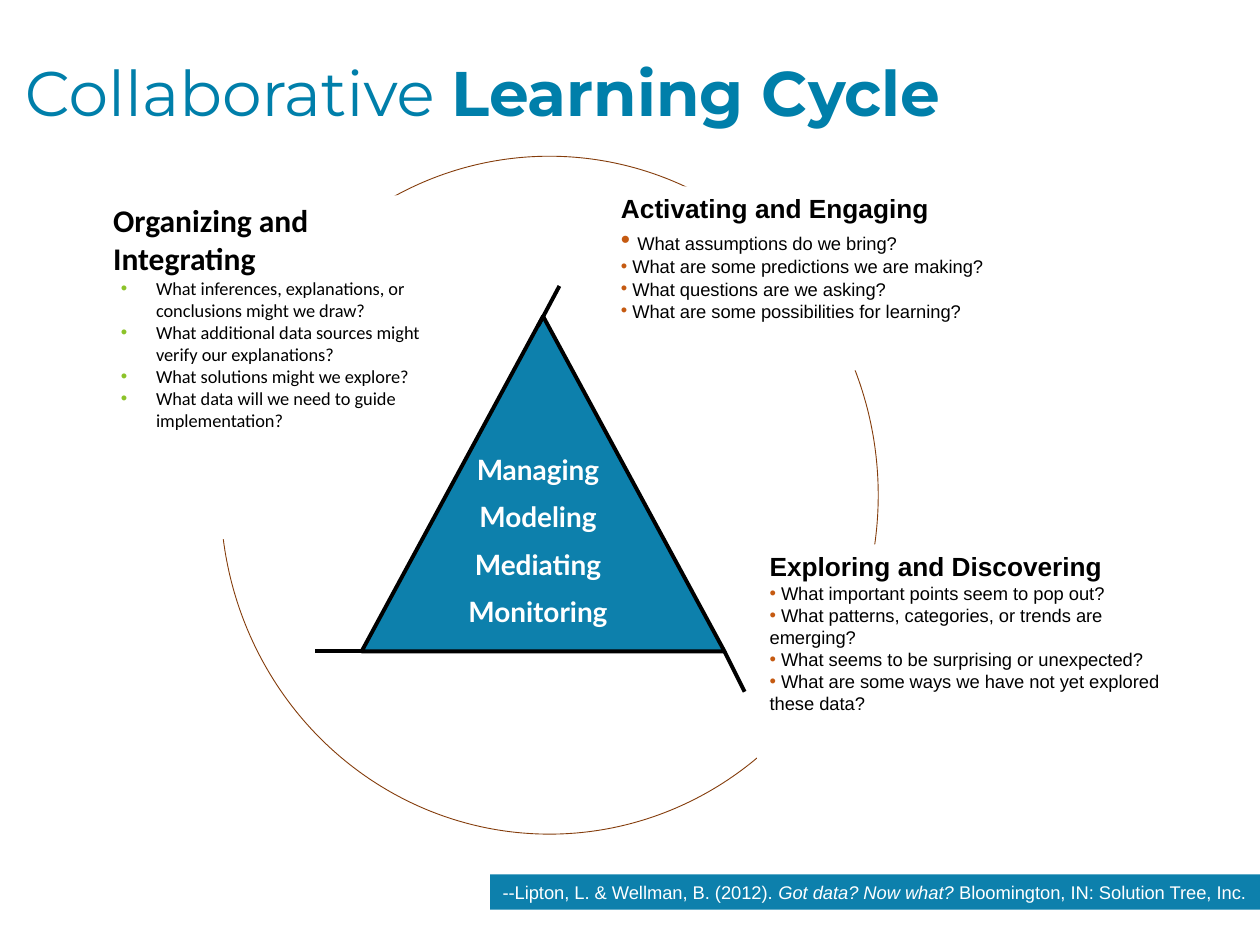
"""Build the Collaborative Learning Cycle slide."""
from lxml.etree import SubElement
from pptx import Presentation
from pptx.dml.color import RGBColor
from pptx.enum.shapes import MSO_CONNECTOR, MSO_SHAPE
from pptx.enum.text import MSO_ANCHOR, PP_ALIGN
from pptx.oxml.ns import qn
from pptx.util import Inches, Pt

RECT, OVAL, PEAK = MSO_SHAPE.RECTANGLE, MSO_SHAPE.OVAL, MSO_SHAPE.ISOSCELES_TRIANGLE
LINE = MSO_CONNECTOR.STRAIGHT
LEFT, MID = PP_ALIGN.LEFT, PP_ALIGN.CENTER
TOP, HALF = MSO_ANCHOR.TOP, MSO_ANCHOR.MIDDLE

WHITE = RGBColor(0xFF, 0xFF, 0xFF)
BLACK = RGBColor(0, 0, 0)
TEAL = RGBColor(0x00, 0x7F, 0xAA)
BLUE = RGBColor(0x0D, 0x80, 0xAC)
BROWN = RGBColor(0x84, 0x3C, 0x0B)
RUST = RGBColor(0xC5, 0x5A, 0x11)
GREEN = RGBColor(0x8C, 0xC3, 0x29)

COLS, ROWS, CELL = 100, 75, Inches(0.1)

TITLE = [[("Collaborative ", {}), ("Learning Cycle", {"bold": True})]]
PHASES = [
    {"box": (48.3, 14.8, 40.9, 14.6), "head": "Activating and Engaging",
     "face": "Arial", "size": 15, "dot": RUST, "hang": 0, "lead": " ",
     "asks": ["What assumptions do we bring?",
              " What are some predictions we are making?",
              " What questions are we asking?",
              " What are some possibilities for learning?"]},
    {"box": (60.1, 43.2, 34.2, 20.5), "head": "Exploring and Discovering",
     "face": "Arial", "size": 15, "dot": RUST, "hang": 0, "lead": "",
     "asks": [" What important points seem to pop out?",
              " What patterns, categories, or trends are emerging?",
              " What seems to be surprising or unexpected?",
              " What are some ways we have not yet explored these data?"]},
    {"box": (8, 15.5, 29.1, 27.3), "head": "Organizing and Integrating",
     "face": "Calibri", "size": 18, "dot": GREEN, "hang": 0.28, "lead": "",
     "asks": ["What inferences, explanations, or conclusions might we draw?",
              "What additional data sources might verify our explanations?",
              "What solutions might we explore?",
              "What data will we need to guide implementation?"]},
]
ROLES = ["Managing", "Modeling", "Mediating", "Monitoring"]
SOURCE = [[("--Lipton, L. & Wellman, B. (2012). ", {}),
           ("Got data? Now what? ", {"italic": True}),
           ("Bloomington, IN: Solution Tree, Inc.", {})]]
CYCLE = (17.5, 12.4, 52.2, 53.8)
CORE = (28.7, 25.1, 28.8, 26.6)
TAILS = [((28.7, 51.7), (25, 51.7)),
         ((57.5, 51.7), (59.1, 54.9)),
         ((42.7, 25.9), (44.4, 22.7))]

deck = Presentation()
deck.slide_width, deck.slide_height = COLS * CELL, ROWS * CELL
slide = deck.slides.add_slide(deck.slide_layouts[6])


def cells(nums):
    return [round(n * CELL) for n in nums]


def shape(kind, box, fill, edge=None, width=0):
    item = slide.shapes.add_shape(kind, *cells(box))
    item.shadow.inherit = False
    item.fill.solid()
    item.fill.fore_color.rgb = fill
    if edge is None:
        item.line.fill.background()
    else:
        item.line.color.rgb = edge
        item.line.width = Pt(width)
    return item


def bullet(para, color, hang):
    props = para._p.get_or_add_pPr()
    props.set("marL", str(Inches(hang + 0.06 if hang else 0)))
    props.set("indent", str(-Inches(hang)))
    tint = SubElement(props, qn("a:buClr"))
    SubElement(tint, qn("a:srgbClr"), val=str(color))
    SubElement(props, qn("a:buFont"), typeface="Arial")
    SubElement(props, qn("a:buChar"), char="•")


def write(item, paras, face, size, color, align=LEFT, anchor=TOP,
          gap=0, pitch=1.0, dot=None, hang=0):
    frame = item.text_frame
    frame.word_wrap = True
    frame.vertical_anchor = anchor
    for num, runs in enumerate(paras):
        para = frame.add_paragraph() if num else frame.paragraphs[0]
        para.alignment, para.line_spacing = align, pitch
        if num:
            para.space_before = Pt(gap)
            if dot is not None:
                bullet(para, dot, hang)
        for text, look in runs:
            run = para.add_run()
            run.text = text
            font = run.font
            font.name, font.size = face, Pt(look.get("size", size))
            font.bold = look.get("bold", False)
            font.italic = look.get("italic", False)
            font.color.rgb = color


def label(box):
    return slide.shapes.add_textbox(*cells(box))


write(label((1, 5.2, 83.7, 4.9)), TITLE, "Montserrat", 36, TEAL,
      anchor=HALF, pitch=0.9)
shape(OVAL, CYCLE, WHITE, BROWN, 0.5)

for phase in PHASES:
    big = {"size": phase["size"]}
    paras = [[(phase["head"], {"bold": True, **big})]]
    paras += [[(ask, {})] for ask in phase["asks"]]
    if phase["lead"]:
        paras[1].insert(0, (phase["lead"], big))
    write(shape(RECT, phase["box"], WHITE), paras, phase["face"], 10.5, BLACK,
          dot=phase["dot"], hang=phase["hang"])

shape(PEAK, CORE, BLUE, BLACK, 2.25)
for start, end in TAILS:
    tail = slide.shapes.add_connector(LINE, *cells(start + end))
    tail.line.color.rgb = BLACK
    tail.line.width = Pt(2.25)
    SubElement(tail._element.spPr, qn("a:effectLst"))

write(label((34.3, 35.4, 16.8, 15.8)), [[(role, {"bold": True})] for role in ROLES],
      "Lato", 16, WHITE, align=MID, gap=8)
write(shape(RECT, (38.9, 69.4, 67.6, 2.8), BLUE), SOURCE, "Arial", 10.5, WHITE)

deck.save("out.pptx")
